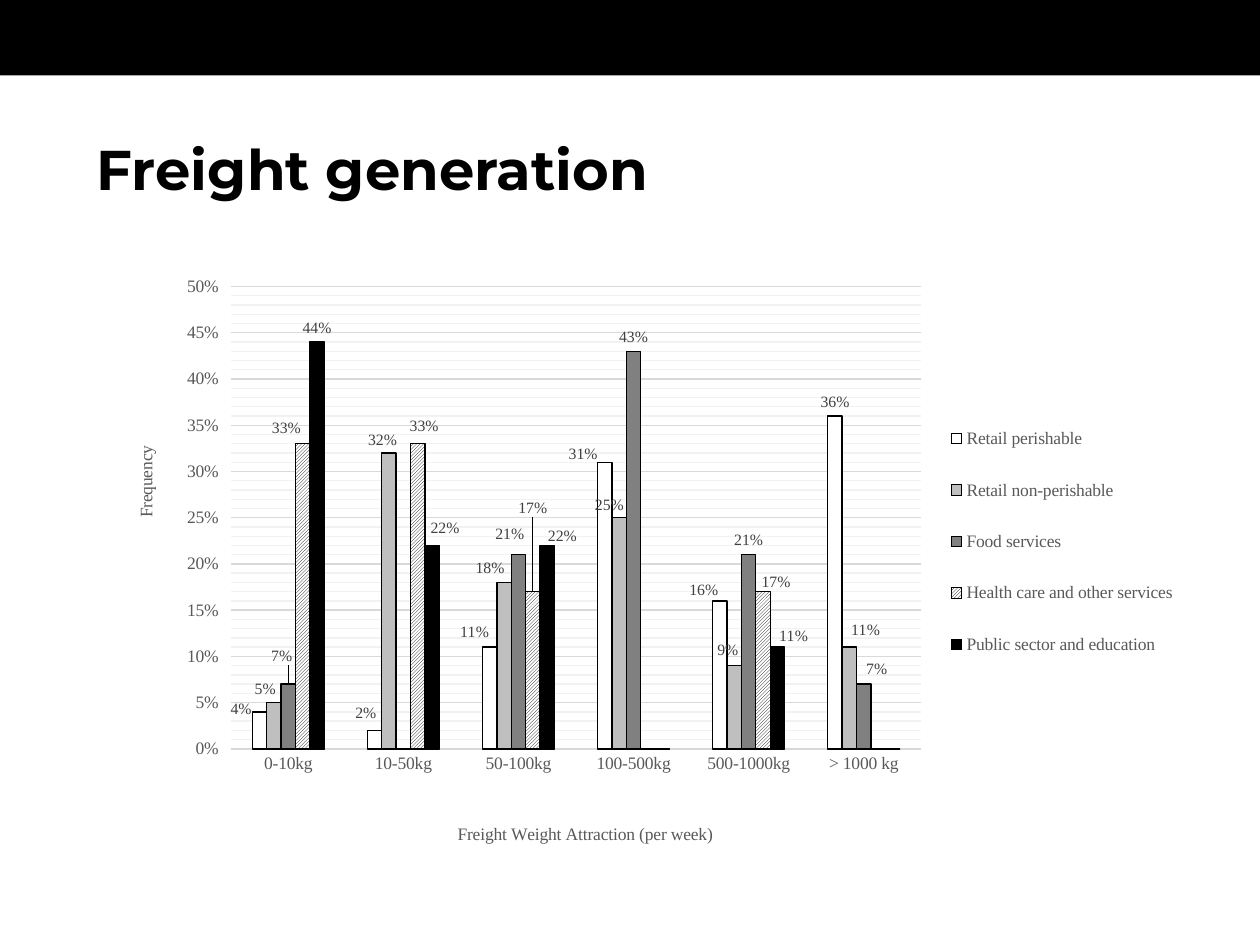
import dataclasses

import pptx
import pptx.chart.data
import pptx.dml.color
import pptx.enum.chart
import pptx.enum.dml
import pptx.enum.shapes
import pptx.enum.text
import pptx.oxml
import pptx.oxml.ns
import pptx.util


@dataclasses.dataclass
class Theme:
    ink: str = "000000"
    paper: str = "FFFFFF"
    axis_text: str = "595959"
    label_text: str = "404040"
    grid: str = "D9D9D9"
    minor_grid: str = "F2F2F2"
    light_bar: str = "BFBFBF"
    middle_bar: str = "808080"
    title_font: str = "Montserrat"
    chart_font: str = "Times New Roman"
    base_font: str = "Arial"
    title_size: int = 32
    axis_size: int = 10
    label_size: int = 9
    line_width: float = 0.75
    percent: str = "0%"


THEME = Theme()
CATEGORIES = ["0-10kg", "10-50kg", "50-100kg", "100-500kg", "500-1000kg", "> 1000 kg"]
SERIES = [
    ("Retail perishable", THEME.paper, [4, 2, 11, 31, 16, 36],
     {0: (-1.7, 1.8), 1: (-0.8, -0.5), 2: (-1.4, -0.2), 3: (-2, 1), 4: (-1.5, 0.6)}),
    ("Retail non-perishable", THEME.light_bar, [5, 32, 18, 25, 9, 11],
     {0: (-0.8, 0.2), 1: (-0.6, 0.3), 2: (-1.3, 0), 3: (-0.9, 0.3),
      4: (-0.6, -0.2), 5: (1.5, -0.5)}),
    ("Food services", THEME.middle_bar, [7, 0, 21, 43, 21, 7],
     {0: (-0.6, -2.3), 2: (-0.8, -1.1), 5: (1.2, -0.2)}),
    ("Health care and other services", None, [33, 33, 17, 0, 17, 0],
     {0: (-1.5, -0.2), 1: (0.6, -0.5), 2: (0, -11.2), 4: (1.2, 0.8)}),
    ("Public sector and education", THEME.ink, [44, 22, 22, 0, 11, 0],
     {1: (1.2, -0.5), 2: (1.4, 0.8), 4: (1.5, 0.6)}),
]


def rgb(color):
    return pptx.dml.color.RGBColor.from_string(color)


def apply(target, **values):
    for name, value in values.items():
        setattr(target, name, value)


def chart_xml(markup):
    tag, rest = markup.split(" ", 1)
    return pptx.oxml.parse_xml(f"<c:{tag} {pptx.oxml.ns.nsdecls('c', 'a')} {rest}")


def place(parent, index, target=None, edge=True, **position):
    for old in parent.findall(pptx.oxml.ns.qn("c:layout")):
        parent.remove(old)
    parts = f'<c:layoutTarget val="{target}"/>' if target else ""
    if edge:
        parts += '<c:xMode val="edge"/><c:yMode val="edge"/>'
    parts += "".join(f'<c:{key} val="{value:g}"/>' for key, value in position.items())
    parent.insert(index, chart_xml(
        f"layout ><c:manualLayout>{parts}</c:manualLayout></c:layout>"))


class SlideBuilder:
    def __init__(self, deck, theme):
        self.theme = theme
        self.slide = deck.slides.add_slide(deck.slide_layouts[6])

    def style_font(self, font, size, color, name=THEME.chart_font, bold=False):
        apply(font, size=pptx.util.Pt(size), name=name, bold=bold)
        font.color.rgb = rgb(color)

    def style_line(self, line, color):
        line.color.rgb = rgb(color)
        line.width = pptx.util.Pt(self.theme.line_width)

    def band(self, *frame):
        shape = self.slide.shapes.add_shape(
            pptx.enum.shapes.MSO_SHAPE.RECTANGLE, *map(pptx.util.Cm, frame))
        shape.shadow.inherit = False
        shape.fill.solid()
        shape.fill.fore_color.rgb = rgb(self.theme.ink)
        shape.line.fill.background()

    def title(self, text, *frame):
        box = self.slide.shapes.add_textbox(*map(pptx.util.Cm, frame))
        apply(box.text_frame, word_wrap=True,
              vertical_anchor=pptx.enum.text.MSO_ANCHOR.MIDDLE)
        span = box.text_frame.paragraphs[0].add_run()
        span.text = text
        self.style_font(span.font, self.theme.title_size, self.theme.ink,
                        self.theme.title_font, True)

    def axis(self, axis, title, x, y, **values):
        apply(axis, **values)
        frame = axis.axis_title.text_frame
        span = frame.paragraphs[0].add_run()
        span.text = title
        for font in (axis.tick_labels.font, span.font):
            self.style_font(font, self.theme.axis_size, self.theme.axis_text)
        place(frame._txBody.getparent().getparent(), 1, x=x, y=y)
        return frame

    def series(self, series, fill, percentages, shifts):
        theme = self.theme
        series.invert_if_negative = False
        paint = series.format.fill
        if fill:
            paint.solid()
        else:
            paint.patterned()
            paint.pattern = pptx.enum.dml.MSO_PATTERN.DARK_UPWARD_DIAGONAL
            paint.back_color.rgb = rgb(theme.paper)
        paint.fore_color.rgb = rgb(fill or theme.ink)
        self.style_line(series.format.line, theme.ink)

        outside = pptx.enum.chart.XL_LABEL_POSITION.OUTSIDE_END
        labels = series.data_labels
        apply(labels, show_value=True, number_format=theme.percent,
              number_format_is_linked=False, position=outside)
        self.style_font(labels.font, theme.label_size, theme.label_text)
        for index, percentage in enumerate(percentages):
            if percentage and index not in shifts:
                continue
            label = series.points[index].data_label
            label.position = outside
            self.style_font(label.font, theme.label_size, theme.label_text)
            element = labels._element.xpath(f"c:dLbl[c:idx/@val='{index}']")[0]
            if percentage:
                x, y = shifts[index]
                place(element, 1, edge=False, x=x / 100, y=y / 100)
                element.insert(2, chart_xml(
                    f'numFmt formatCode="{theme.percent}" sourceLinked="0"/>'))
            else:
                for child in list(element)[1:]:
                    element.remove(child)
                element.append(chart_xml('delete val="1"/>'))

    def column_chart(self, *frame):
        theme = self.theme
        data = pptx.chart.data.CategoryChartData(number_format=theme.percent)
        data.categories = CATEGORIES
        for name, fill, percentages, shifts in SERIES:
            data.add_series(name, [value / 100 for value in percentages])
        chart = self.slide.shapes.add_chart(
            pptx.enum.chart.XL_CHART_TYPE.COLUMN_CLUSTERED,
            *map(pptx.util.Cm, frame), data).chart
        apply(chart, has_title=False, has_legend=True)
        self.style_font(chart.font, theme.axis_size, theme.ink, theme.base_font)
        plot = chart.plots[0]
        apply(plot, gap_width=300, overlap=0, vary_by_categories=False)
        place(chart._chartSpace.chart.plotArea, 0, target="inner",
              x=0.106, y=0.048, w=0.639, h=0.752)
        for series, (name, *style) in zip(plot.series, SERIES):
            self.series(series, *style)

        ticks = pptx.enum.chart.XL_TICK_MARK
        category, value = chart.category_axis, chart.value_axis
        self.axis(category, "Freight Weight Attraction (per week)", 0.313, 0.915,
                  major_tick_mark=ticks.NONE, minor_tick_mark=ticks.NONE)
        self.style_line(category.format.line, theme.grid)
        heading = self.axis(
            value, "Frequency", 0.014, 0.302, minimum_scale=0, maximum_scale=0.5,
            major_unit=0.05, minor_unit=0.01, has_major_gridlines=True,
            has_minor_gridlines=True, major_tick_mark=ticks.OUTSIDE,
            minor_tick_mark=ticks.NONE)
        apply(value.tick_labels, number_format=theme.percent, number_format_is_linked=False)
        for key, setting in {"rot": "-5400000", "vert": "horz"}.items():
            heading._txBody.bodyPr.set(key, setting)
        value.format.line.fill.background()
        self.style_line(value.major_gridlines.format.line, theme.grid)
        value._element.find(pptx.oxml.ns.qn("c:minorGridlines")).append(chart_xml(
            f'spPr ><a:ln w="{pptx.util.Pt(theme.line_width)}"><a:solidFill>'
            f'<a:srgbClr val="{theme.minor_grid}"/></a:solidFill></a:ln></c:spPr>'))

        legend = chart.legend
        apply(legend, position=pptx.enum.chart.XL_LEGEND_POSITION.RIGHT,
              include_in_layout=False)
        self.style_font(legend.font, theme.axis_size, theme.axis_text)
        place(legend._element, 1, x=0.765, y=0.228, w=0.22, h=0.47)


deck = pptx.Presentation()
apply(deck, slide_width=pptx.util.Cm(25.4), slide_height=pptx.util.Cm(19.05))
page = SlideBuilder(deck, THEME)
page.band(0, 0, 25.4, 1.52)
page.column_chart(2.34, 5.18, 21.79, 12.4)
page.title("Freight generation", 1.7, 2.34, 23.7, 2.11)
deck.save("out.pptx")
